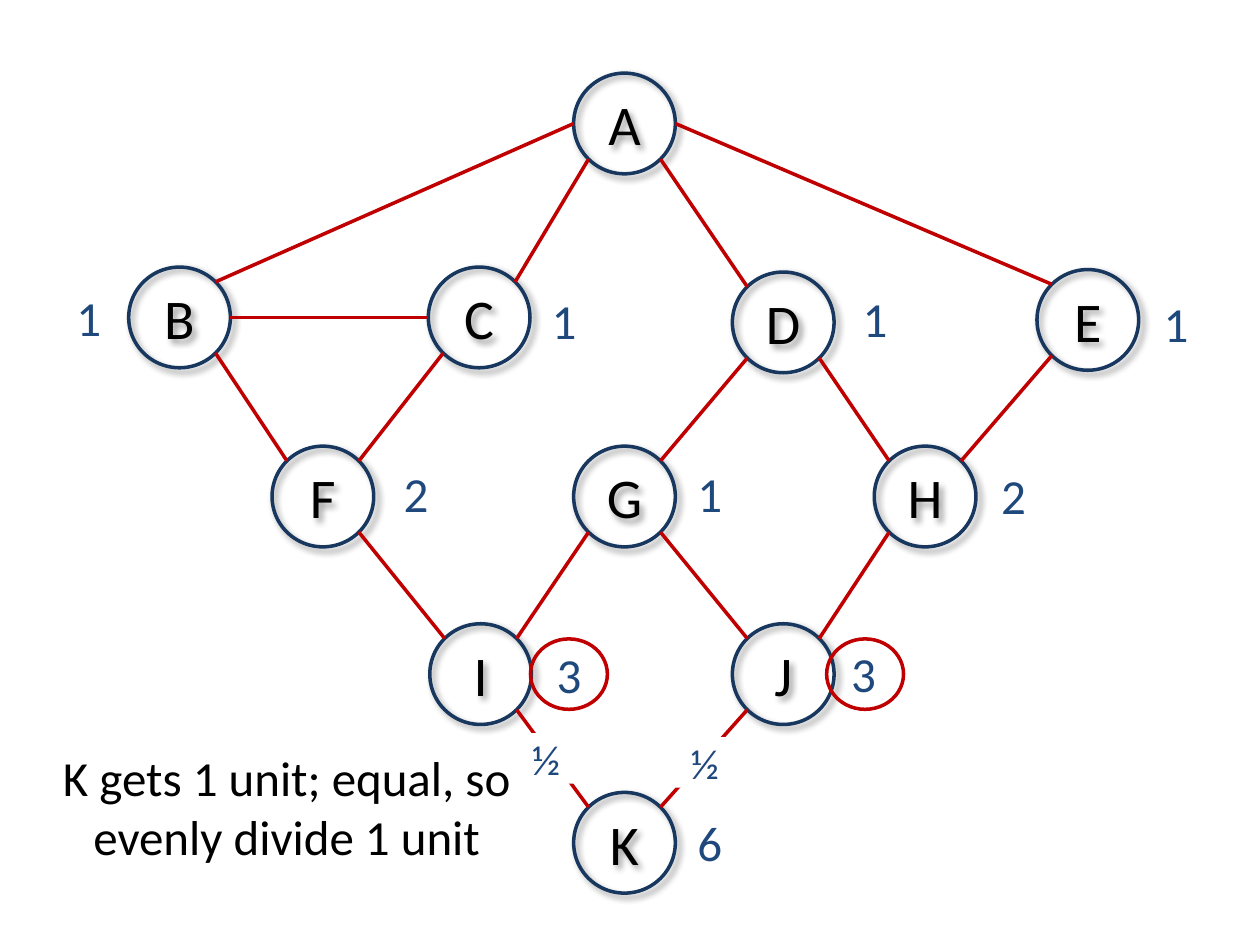
from dataclasses import dataclass
from math import sqrt

from lxml import etree
from pptx import Presentation
from pptx import util as u
from pptx.dml.color import RGBColor
from pptx.enum import shapes, text
from pptx.oxml import parse_xml
from pptx.oxml.ns import nsdecls, qn


@dataclass(frozen=True)
class Theme:
    font: str = "Calibri"
    ink: str = "000000"
    outline: str = "17375E"
    accent: str = "C00000"
    count: str = "1F497D"
    paper: str = "FFFFFF"
    node_size: int = 32
    body_size: int = 28
    share_size: int = 24
    stroke: int = 2


NODE_SIZE = (2.05, 2.03)
COUNT_SIZE = (1.55, 1.45)
RING_SIZE = (1.55, 1.42)
SHARE_SIZE = (1.55, 1.02)

# Centres in centimetres
NODES = {
    "A": (12.59, 2.49),
    "B": (3.62, 6.4), "C": (9.66, 6.4), "D": (15.79, 6.5), "E": (21.93, 6.45),
    "F": (6.51, 10.01), "G": (12.59, 10.01), "H": (18.65, 10.01),
    "I": (9.69, 13.59), "J": (15.79, 13.59),
    "K": (12.59, 16.99),
}
COUNTS = [
    ("1", (1.79, 6.39)), ("1", (11.37, 6.46)), ("1", (17.64, 6.41)), ("1", (23.71, 6.52)),
    ("2", (8.39, 9.94)), ("1", (14.31, 9.94)), ("2", (20.43, 9.99)),
    ("3", (11.47, 13.6)), ("3", (17.41, 13.58)),
    ("6", (14.31, 16.98)),
]
RINGS = [(11.47, 13.59), (17.44, 13.59)]
SHARES = [(11.11, 15.29), (14.31, 15.37)]

# Points on a node's rim, as fractions of its half width and half height
DIAGONAL = 1 / sqrt(2)
RIM = {
    "left": (-1, 0), "right": (1, 0),
    "upper left": (-DIAGONAL, -DIAGONAL), "upper right": (DIAGONAL, -DIAGONAL),
    "lower left": (-DIAGONAL, DIAGONAL), "lower right": (DIAGONAL, DIAGONAL),
}
SIDE_EDGES = [
    ("A", "left", "B", "upper right"),
    ("A", "right", "E", "upper left"),
    ("B", "right", "C", "left"),
]
DOWNWARD_EDGES = ["AC", "AD", "BF", "CF", "DG", "DH", "EH", "FI", "GI", "GJ", "HJ", "IK", "JK"]


class GraphSlide:
    def __init__(self, page, theme):
        self.page = page
        self.theme = theme

    def frame(self, center, size):
        """Left, top, width and height of a box around its centre."""
        (x, y), (width, height) = center, size
        return [u.Cm(value) for value in (x - width / 2, y - height / 2, width, height)]

    def add_words(self, box, words, size, color):
        para = box.text_frame.paragraphs[0]
        para.alignment = text.PP_ALIGN.CENTER
        span = para.add_run()
        span.text = words
        span.font.name = self.theme.font
        span.font.size = u.Pt(size)
        span.font.color.rgb = RGBColor.from_string(color)

    def stroke(self, line, color):
        line.color.rgb = RGBColor.from_string(color)
        line.width = u.Pt(self.theme.stroke)

    def ring(self, center, size, color):
        oval = self.page.shapes.add_shape(shapes.MSO_SHAPE.OVAL, *self.frame(center, size))
        oval.shadow.inherit = False
        oval.fill.background()
        self.stroke(oval.line, color)
        return oval

    def node(self, name, center):
        oval = self.ring(center, NODE_SIZE, self.theme.outline)
        effects = oval.element.spPr.find(qn("a:effectLst"))
        effects.append(parse_xml(
            f'<a:outerShdw {nsdecls("a")} blurRad="{u.Pt(4)}" dist="{u.Pt(3)}" dir="2700000"'
            ' algn="tl" rotWithShape="0"><a:srgbClr val="000000"><a:alpha val="40000"/>'
            '</a:srgbClr></a:outerShdw>'))
        frame = oval.text_frame
        frame.margin_left = frame.margin_right = 0
        frame.vertical_anchor = text.MSO_ANCHOR.MIDDLE
        self.add_words(oval, name, self.theme.node_size, self.theme.ink)

    def edge(self, start, start_side, end, end_side):
        ends = []
        for name, side in ((start, start_side), (end, end_side)):
            for middle, extent, share in zip(NODES[name], NODE_SIZE, RIM[side]):
                ends.append(u.Cm(middle + share * extent / 2))
        line = self.page.shapes.add_connector(shapes.MSO_CONNECTOR.STRAIGHT, *ends)
        self.stroke(line.line, self.theme.accent)
        etree.SubElement(line.element.spPr, qn("a:effectLst"))

    def downward_edge(self, upper, lower):
        heading, origin = ("right", "left") if NODES[lower][0] > NODES[upper][0] else ("left", "right")
        self.edge(upper, f"lower {heading}", lower, f"upper {origin}")

    def label(self, words, center, size, points, color):
        box = self.page.shapes.add_textbox(*self.frame(center, size))
        box.text_frame.word_wrap = True
        box.text_frame.auto_size = text.MSO_AUTO_SIZE.SHAPE_TO_FIT_TEXT
        self.add_words(box, words, points, color)
        return box

    def share(self, center):
        """A fraction on a paper-coloured patch that interrupts the edge below."""
        box = self.label("½ ", center, SHARE_SIZE, self.theme.share_size, self.theme.count)
        box.text_frame.margin_top = box.text_frame.margin_bottom = 0
        box.fill.solid()
        box.fill.fore_color.rgb = RGBColor.from_string(self.theme.paper)


def main():
    deck = Presentation()
    deck.slide_width, deck.slide_height = u.Cm(25.4), u.Cm(19.05)
    theme = Theme()
    graph = GraphSlide(deck.slides.add_slide(deck.slide_layouts[6]), theme)

    for name, center in NODES.items():
        graph.node(name, center)
    for ends in SIDE_EDGES:
        graph.edge(*ends)
    for upper, lower in DOWNWARD_EDGES:
        graph.downward_edge(upper, lower)
    for count, center in COUNTS:
        graph.label(count, center, COUNT_SIZE, theme.body_size, theme.count)
    for center in RINGS:
        graph.ring(center, RING_SIZE, theme.accent)
    graph.label("K gets 1 unit; equal, so evenly divide 1 unit",
                (5.78, 16.26), (9.88, 2.64), theme.body_size, theme.ink)
    for center in SHARES:
        graph.share(center)

    deck.save("out.pptx")


if __name__ == "__main__":
    main()
